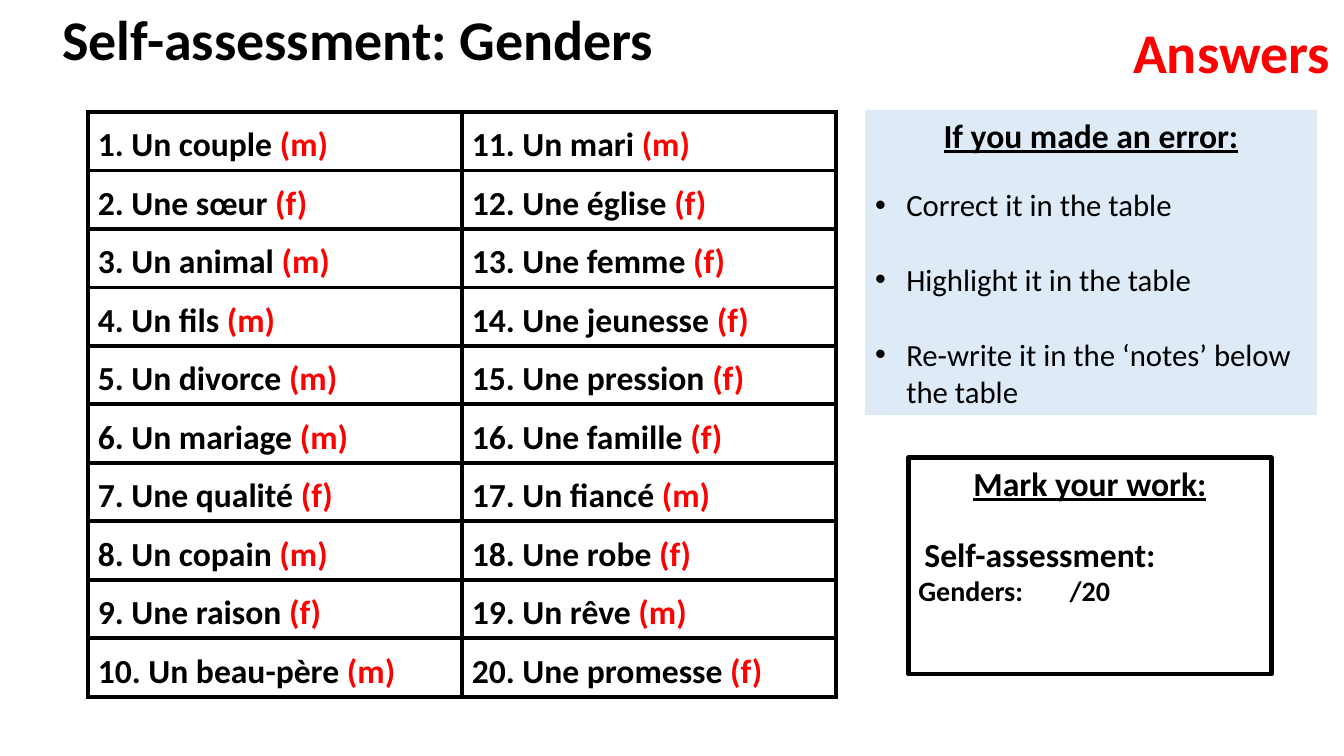
from lxml import etree
from pptx import Presentation
from pptx.dml.color import RGBColor
from pptx.enum.shapes import MSO_SHAPE
from pptx.enum.text import MSO_ANCHOR, MSO_AUTO_SIZE, PP_ALIGN
from pptx.oxml import parse_xml
from pptx.oxml.ns import nsdecls, qn
from pptx.util import Inches, Pt

BLACK = RGBColor(0x00, 0x00, 0x00)
RED = RGBColor(0xFF, 0x00, 0x00)
WHITE = RGBColor(0xFF, 0xFF, 0xFF)
PALE_BLUE = RGBColor(0xDE, 0xEB, 0xF7)
RECTANGLE = MSO_SHAPE.RECTANGLE
TOP = MSO_ANCHOR.TOP
GROW = MSO_AUTO_SIZE.SHAPE_TO_FIT_TEXT
LEFT, CENTER = PP_ALIGN.LEFT, PP_ALIGN.CENTER

NOUNS = [
    "Un couple", "Une sœur", "Un animal", "Un fils", "Un divorce",
    "Un mariage", "Une qualité", "Un copain", "Une raison", "Un beau-père",
    "Un mari", "Une église", "Une femme", "Une jeunesse", "Une pression",
    "Une famille", "Un fiancé", "Une robe", "Un rêve", "Une promesse",
]
ADVICE = [
    "Correct it in the table",
    "Highlight it in the table",
    "Re-write it in the ‘notes’ below the table",
]


def add_text(paragraph, text, size=24, color=BLACK, bold=True, underline=False):
    """Append a formatted run to a paragraph."""
    run = paragraph.add_run()
    run.text = text
    run.font.name = "Calibri"
    run.font.size = Pt(size)
    run.font.color.rgb = color
    run.font.bold = bold
    run.font.underline = underline


def next_paragraph(frame, align=LEFT, before=0):
    """Return the empty first paragraph of a frame, or a new one."""
    paragraph = frame.paragraphs[0]
    if paragraph.runs:
        paragraph = frame.add_paragraph()
        paragraph.space_before = Pt(before)
    paragraph.alignment = align
    return paragraph


def set_indent(paragraph, margin, first=0.0):
    """Set the left margin and first-line indent in inches."""
    properties = paragraph._p.get_or_add_pPr()
    properties.set("marL", str(Inches(margin)))
    properties.set("indent", str(Inches(first)))
    return properties


class Worksheet:
    """Draw elements on one slide, placed in percent of its width and height."""

    def __init__(self, presentation):
        self.column = presentation.slide_width / 100
        self.row = presentation.slide_height / 100
        self.slide = presentation.slides.add_slide(presentation.slide_layouts[6])
        self.shapes = self.slide.shapes

    def place(self, left, top, width, height):
        """Turn percentages into slide lengths."""
        return (round(left * self.column), round(top * self.row),
                round(width * self.column), round(height * self.row))

    def label(self, area, text, color=BLACK):
        """Add a large one-line text."""
        shape = self.shapes.add_textbox(*self.place(*area))
        shape.text_frame.word_wrap = False
        shape.text_frame.auto_size = GROW
        add_text(next_paragraph(shape.text_frame), text, size=40, color=color)

    def panel(self, area, heading, fill=None, line=None):
        """Add a box with an underlined heading and return its text frame."""
        shape = self.shapes.add_shape(RECTANGLE, *self.place(*area))
        shape.shadow.inherit = False
        if fill is None:
            shape.fill.background()
        else:
            shape.fill.solid()
            shape.fill.fore_color.rgb = fill
        if line is None:
            shape.line.fill.background()
        else:
            shape.line.color.rgb = line
            shape.line.width = Pt(3)
        frame = shape.text_frame
        frame.word_wrap = True
        frame.auto_size = GROW
        frame.vertical_anchor = TOP
        add_text(next_paragraph(frame, CENTER), heading, underline=True)
        return frame

    def bullets(self, frame, items):
        """Add spaced bullet points to a frame."""
        for index, item in enumerate(items):
            paragraph = next_paragraph(frame, before=27 if index else 22)
            properties = set_indent(paragraph, 0.31, -0.31)
            etree.SubElement(properties, qn("a:buFont"), typeface="Arial")
            etree.SubElement(properties, qn("a:buChar"), char="•")
            add_text(paragraph, item, size=22, bold=False)

    def score(self, frame, title, subject, total):
        """Add a score line whose total sits on a tab stop."""
        paragraph = next_paragraph(frame, before=22)
        set_indent(paragraph, 0.06)
        add_text(paragraph, title)
        paragraph = next_paragraph(frame)
        tabs = etree.SubElement(set_indent(paragraph, 0), qn("a:tabLst"))
        etree.SubElement(tabs, qn("a:tab"), pos=str(Inches(1.79)), algn="l")
        add_text(paragraph, f"{subject}\t{total}", size=20)

    def noun_table(self, area, nouns, columns=2):
        """Add the numbered nouns, column by column, with their genders."""
        rows = len(nouns) // columns
        table = self.shapes.add_table(rows, columns, *self.place(*area)).table
        table.first_row = table.horz_banding = False
        for index, noun in enumerate(nouns):
            column, row = divmod(index, rows)
            cell = table.cell(row, column)
            self.cell_style(cell)
            paragraph = next_paragraph(cell.text_frame)
            paragraph.line_spacing = 1.2
            gender = "(m)" if noun.startswith("Un ") else "(f)"
            add_text(paragraph, f"{index + 1}. {noun} ")
            add_text(paragraph, gender, color=RED)

    def cell_style(self, cell):
        """Give a cell black borders and a white fill."""
        properties = cell._tc.get_or_add_tcPr()
        for side in ("lnL", "lnR", "lnT", "lnB"):
            properties.append(parse_xml(
                f'<a:{side} {nsdecls("a")} w="{Pt(3)}"><a:solidFill>'
                f'<a:srgbClr val="{BLACK}"/></a:solidFill></a:{side}>'))
        cell.fill.solid()
        cell.fill.fore_color.rgb = WHITE


def main():
    """Build and save the answer slide."""
    presentation = Presentation()
    presentation.slide_width = Inches(13.33)
    presentation.slide_height = Inches(7.5)
    sheet = Worksheet(presentation)
    sheet.label((3.9, 0, 46.14, 10.27), "Self-assessment: Genders")
    sheet.noun_table((6.53, 14.8, 55.66, 77.33), NOUNS)
    sheet.label((83.57, 1.6, 16.43, 10.27), "Answers", color=RED)
    advice = sheet.panel((64.37, 14.53, 33.61, 40.4), "If you made an error:", fill=PALE_BLUE)
    sheet.bullets(advice, ADVICE)
    marks = sheet.panel((67.59, 60.53, 27.01, 28.67), "Mark your work:", line=BLACK)
    marks.auto_size = MSO_AUTO_SIZE.NONE
    sheet.score(marks, "Self-assessment:", "Genders:", "/20")
    presentation.save("out.pptx")


if __name__ == "__main__":
    main()
